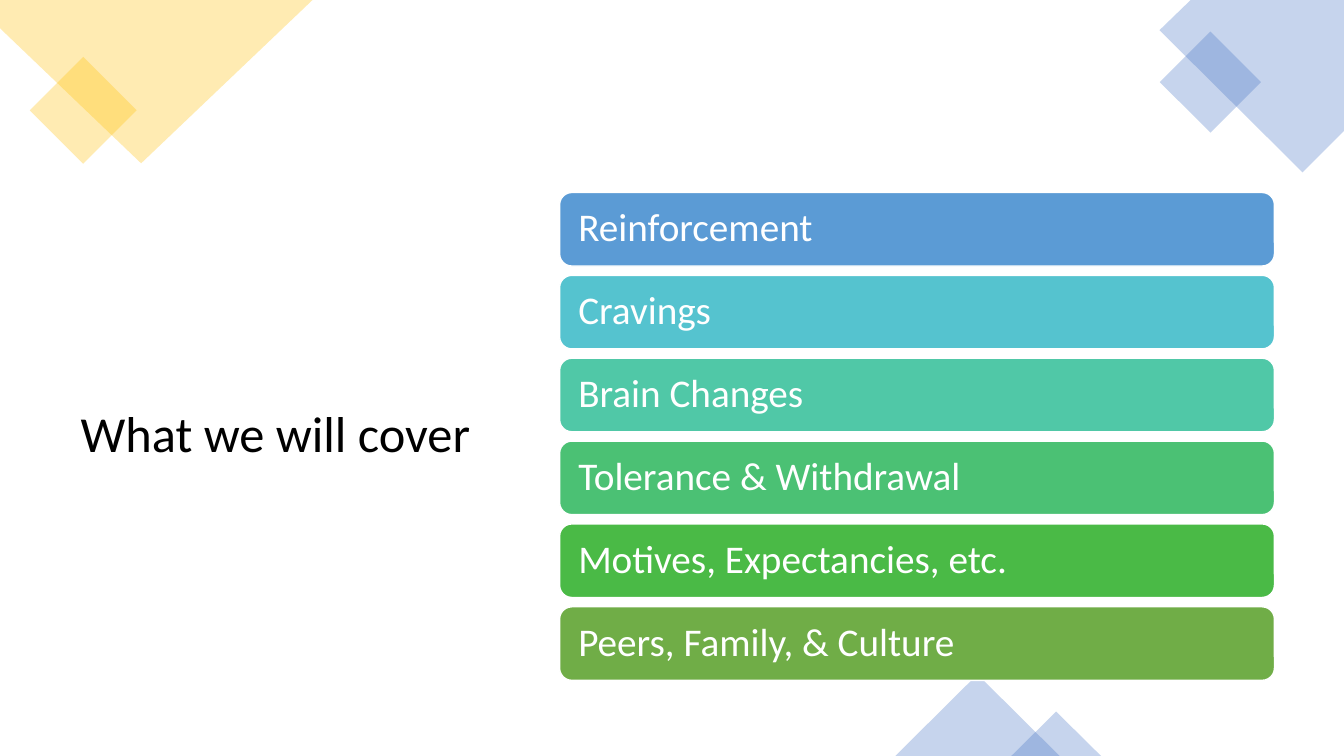
from dataclasses import dataclass

from lxml.etree import SubElement
from pptx import Presentation
from pptx.dml.color import RGBColor
from pptx.enum.shapes import MSO_SHAPE
from pptx.enum.text import MSO_ANCHOR, MSO_AUTO_SIZE, PP_ALIGN
from pptx.oxml.ns import qn
from pptx.util import Inches, Pt


@dataclass(frozen=True)
class Theme:
    font: str = "Calibri"
    title_size: int = 36
    topic_size: int = 28
    text: str = "000000"
    white: str = "FFFFFF"
    gold: str = "FFC000"
    blue: str = "4472C4"
    opacity: int = 30


THEME = Theme()

# Content
TITLE = "What we will cover"
TOPICS = [
    ("Reinforcement", "5B9BD5"),
    ("Cravings", "55C3CF"),
    ("Brain Changes", "50C8A7"),
    ("Tolerance & Withdrawal", "4BC174"),
    ("Motives, Expectancies, etc.", "4ABA46"),
    ("Peers, Family, & Culture", "70AD47"),
]

# Corner decorations: outlines as points, presets as (kind, box, rotation, colour)
CORNERS = [
    ([(0, 0), (3.1, 0), (1.4, 1.62), (0, 0.28)], THEME.gold),
    ([(11.81, 0), (13.33, 0), (13.33, 1.3), (12.92, 1.71), (11.5, 0.3)], THEME.blue),
]
ACCENTS = [
    (MSO_SHAPE.RECTANGLE, (0.45, 0.72, 0.75, 0.75), 45, THEME.gold),
    (MSO_SHAPE.RECTANGLE, (11.65, 0.46, 0.71, 0.71), 45, THEME.blue),
    (MSO_SHAPE.ISOSCELES_TRIANGLE, (8.88, 6.69, 1.63, 0.81), 0, THEME.blue),
    (MSO_SHAPE.ISOSCELES_TRIANGLE, (10.03, 7.06, 0.89, 0.44), 0, THEME.blue),
]

# Topic card grid
CARD_LEFT, CARD_TOP, CARD_WIDTH, CARD_HEIGHT = 5.55, 1.91, 7.09, 0.73
CARD_STEP = 0.822


def inches(values):
    return [Inches(value) for value in values]


def write(shape, text, size, color, inset=0.1):
    frame = shape.text_frame
    frame.word_wrap = True
    frame.auto_size = MSO_AUTO_SIZE.NONE
    frame.vertical_anchor = MSO_ANCHOR.MIDDLE
    frame.margin_left = frame.margin_right = Inches(inset)
    frame.text = text
    paragraph = frame.paragraphs[0]
    paragraph.alignment = PP_ALIGN.LEFT
    paragraph.line_spacing = 0.9
    font = paragraph.runs[0].font
    font.name = THEME.font
    font.size = Pt(size)
    font.color.rgb = RGBColor.from_string(color)


def paint(shape, color, opacity=100, outline=None):
    shape.shadow.inherit = False
    shape.fill.solid()
    shape.fill.fore_color.rgb = RGBColor.from_string(color)
    if opacity < 100:
        rgb = shape.fill._xPr.find(qn("a:solidFill"))[0]
        SubElement(rgb, qn("a:alpha"), val=str(opacity * 1000))
    if outline:
        shape.line.color.rgb = RGBColor.from_string(outline)
        shape.line.width = Pt(1)
    else:
        shape.line.fill.background()


presentation = Presentation()
presentation.slide_width, presentation.slide_height = inches((13.33, 7.5))
slide = presentation.slides.add_slide(presentation.slide_layouts[5])
shapes = slide.shapes

# Title
title = shapes.title
title.left, title.top, title.width, title.height = inches((0.7, 1.86, 4.33, 4.94))
write(title, TITLE, THEME.title_size, THEME.text)

# Decorations
for points, color in CORNERS:
    start, *rest = [inches(point) for point in points]
    outline = shapes.build_freeform(*start)
    outline.add_line_segments(rest, close=True)
    paint(outline.convert_to_shape(), color, THEME.opacity)

for kind, box, rotation, color in ACCENTS:
    accent = shapes.add_shape(kind, *inches(box))
    accent.rotation = rotation
    paint(accent, color, THEME.opacity)

# Topic cards
for row, (topic, color) in enumerate(TOPICS):
    box = (CARD_LEFT, CARD_TOP + row * CARD_STEP, CARD_WIDTH, CARD_HEIGHT)
    card = shapes.add_shape(MSO_SHAPE.ROUNDED_RECTANGLE, *inches(box))
    paint(card, color, outline=THEME.white)
    write(card, topic, THEME.topic_size, THEME.white, inset=0.15)

presentation.save("out.pptx")
